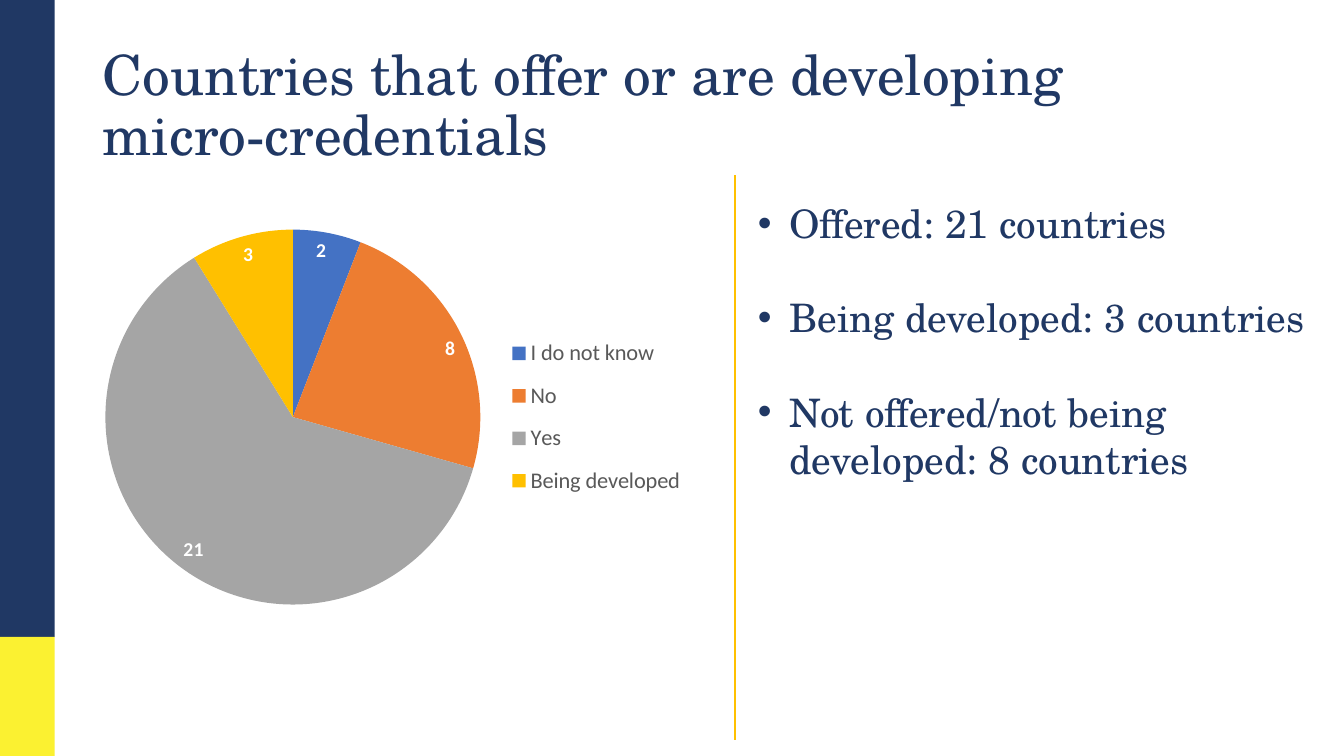
"""Builds the slide on countries that offer or are developing micro-credentials."""
from dataclasses import dataclass

from lxml.etree import SubElement
from pptx import Presentation
from pptx.chart.data import CategoryChartData
from pptx.dml.color import RGBColor
from pptx.enum.chart import XL_CHART_TYPE, XL_LABEL_POSITION, XL_LEGEND_POSITION
from pptx.enum.shapes import MSO_CONNECTOR, MSO_SHAPE
from pptx.enum.text import MSO_ANCHOR, MSO_AUTO_SIZE, PP_ALIGN
from pptx.oxml import parse_xml
from pptx.oxml.ns import nsdecls, qn
from pptx.util import Pt


@dataclass(frozen=True)
class Theme:
    navy: str = "203864"
    yellow: str = "FBF131"
    gold: str = "FFC000"
    gray: str = "595959"
    white: str = "FFFFFF"
    slices: tuple = ("4472C4", "ED7D31", "A5A5A5", "FFC000")
    text_font: str = "TeX Gyre Schola"
    chart_font: str = "Calibri"
    title_size: float = 39.6
    body_size: float = 28
    legend_size: float = 16
    label_size: float = 14


class SlideBuilder:
    def __init__(self, page, theme):
        self.page = page
        self.theme = theme

    def style(self, font, size, color, name, bold=False):
        font.size = Pt(size)
        font.name = name
        font.bold = bold
        font.color.rgb = RGBColor.from_string(color)

    def place(self, box, left, top, width, height, anchor):
        box.left, box.top, box.width, box.height = map(Pt, (left, top, width, height))
        frame = box.text_frame
        frame.word_wrap = True
        frame.auto_size = MSO_AUTO_SIZE.NONE
        frame.vertical_anchor = anchor
        return frame

    def title(self, text, *bounds):
        frame = self.place(self.page.shapes.title, *bounds, MSO_ANCHOR.MIDDLE)
        frame.text = text
        para = frame.paragraphs[0]
        para.alignment = PP_ALIGN.LEFT
        para.line_spacing = 0.9
        for span in para.runs:
            self.style(span.font, self.theme.title_size, self.theme.navy, self.theme.text_font)

    def bullets(self, items, *bounds, indent=22.5, gap=33.6):
        frame = self.place(self.page.placeholders[1], *bounds, MSO_ANCHOR.TOP)
        frame.text = "\n".join(items)
        for index, para in enumerate(frame.paragraphs):
            para.space_before = Pt(gap if index else 0)
            properties = para._p.get_or_add_pPr()
            properties.set("marL", str(Pt(indent)))
            properties.set("indent", str(-Pt(indent)))
            SubElement(properties, qn("a:buFont")).set("typeface", "Arial")
            SubElement(properties, qn("a:buChar")).set("char", "•")
            for span in para.runs:
                self.style(span.font, self.theme.body_size, self.theme.navy, self.theme.text_font)

    def block(self, color, *bounds):
        shape = self.page.shapes.add_shape(MSO_SHAPE.RECTANGLE, *map(Pt, bounds))
        shape.shadow.inherit = False
        shape.fill.solid()
        shape.fill.fore_color.rgb = RGBColor.from_string(color)
        shape.line.fill.background()

    def divider(self, *ends):
        line = self.page.shapes.add_connector(MSO_CONNECTOR.STRAIGHT, *map(Pt, ends))
        line.line.color.rgb = RGBColor.from_string(self.theme.gold)
        line.line.width = Pt(1.5)
        SubElement(line._element.spPr, qn("a:effectLst"))

    def layout(self, x, y, w, h, inner=False):
        target = '<c:layoutTarget val="inner"/>' if inner else ""
        modes = "".join(f'<c:{axis}Mode val="edge"/>' for axis in "xy")
        values = "".join(f'<c:{key} val="{value}"/>' for key, value in zip("xywh", (x, y, w, h)))
        return parse_xml(f"<c:layout {nsdecls('c')}><c:manualLayout>{target}{modes}{values}"
                         "</c:manualLayout></c:layout>")

    def pie(self, counts, *bounds):
        data = CategoryChartData()
        data.categories = list(counts)
        data.add_series("Series 1", list(counts.values()))
        chart = self.page.shapes.add_chart(XL_CHART_TYPE.PIE, *map(Pt, bounds), data).chart
        chart.has_title = False
        self.style(chart.font, self.theme.legend_size, self.theme.gray, self.theme.chart_font)
        plot = chart.plots[0]
        plot.vary_by_categories = True
        series = plot.series[0]
        for index, color in enumerate(self.theme.slices):
            fill = series.points[index].format.fill
            fill.solid()
            fill.fore_color.rgb = RGBColor.from_string(color)
        labels = series.data_labels
        labels.show_value = True
        labels.show_percentage = False
        labels.position = XL_LABEL_POSITION.INSIDE_END
        self.style(labels.font, self.theme.label_size, self.theme.white,
                   self.theme.chart_font, bold=True)
        chart.has_legend = True
        legend = chart.legend
        legend.position = XL_LEGEND_POSITION.RIGHT
        legend.include_in_layout = False
        self.style(legend.font, self.theme.legend_size, self.theme.gray, self.theme.chart_font)
        area = chart._chartSpace.chart.plotArea
        for old in area.findall(qn("c:layout")):
            area.remove(old)
        area.insert(0, self.layout(0.02, 0.06, 0.62, 0.75, inner=True))
        legend_element = legend._element
        for old in legend_element.findall(qn("c:layout")):
            legend_element.remove(old)
        legend_element.find(qn("c:legendPos")).addnext(self.layout(0.67, 0.25, 0.32, 0.37))


def main():
    theme = Theme()
    deck = Presentation()
    deck.slide_width, deck.slide_height = Pt(960), Pt(540)
    builder = SlideBuilder(deck.slides.add_slide(deck.slide_layouts[1]), theme)
    builder.title("Countries that offer or are developing micro-credentials", 66.2, 28.8, 780, 96.5)
    builder.pie({"I do not know": 2, "No": 8, "Yes": 21, "Being developed": 3},
                66.2, 142.6, 433.4, 357.1)
    builder.block(theme.navy, 0, 0, 39, 455)
    builder.block(theme.yellow, 0, 455, 39, 85)
    builder.divider(524.9, 125.3, 524.9, 528.5)
    builder.bullets(["Offered: 21 countries", "Being developed: 3 countries",
                     "Not offered/not being developed: 8 countries"], 534.2, 139, 408.2, 211)
    deck.save("out.pptx")


if __name__ == "__main__":
    main()
